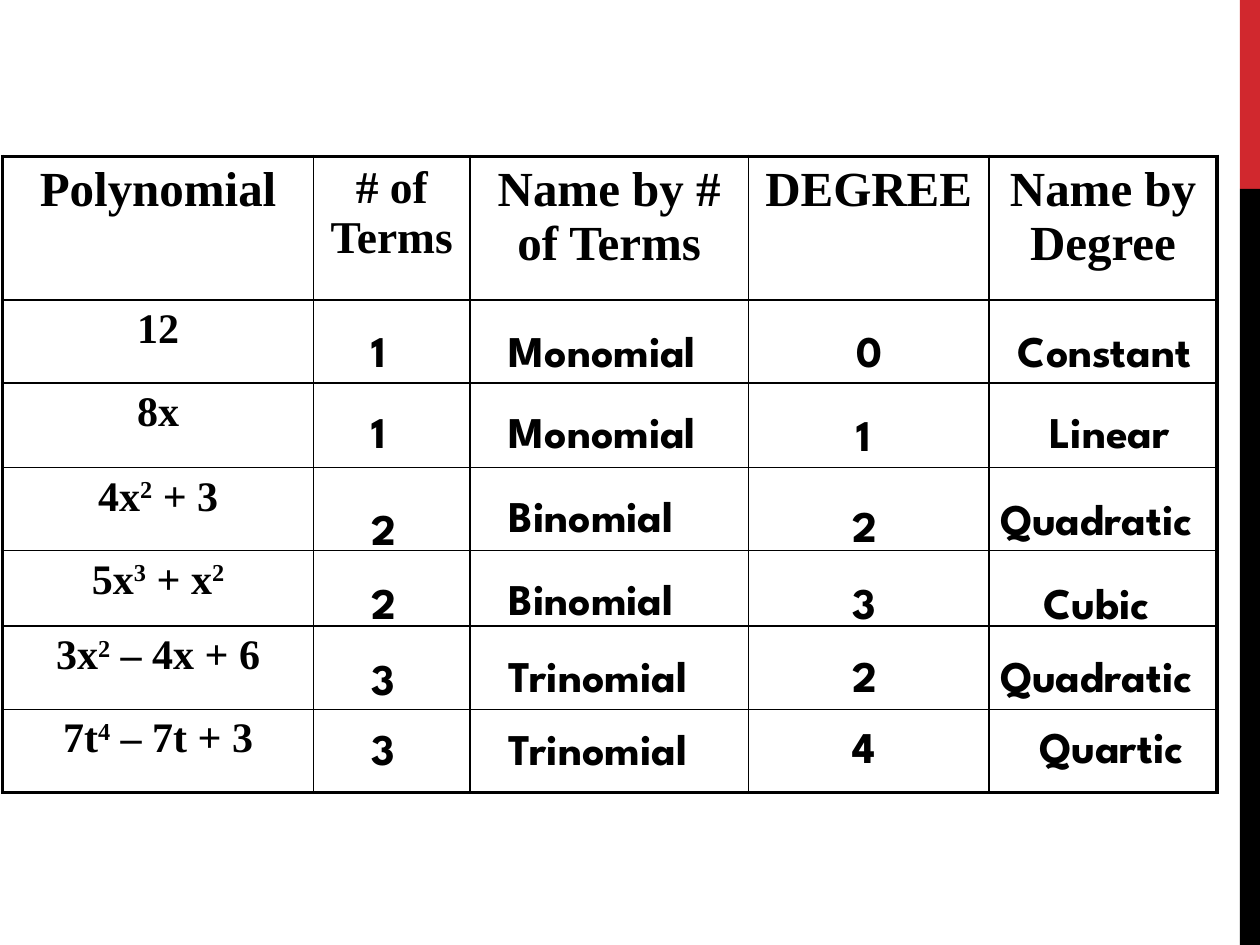
from lxml.etree import SubElement
from pptx import Presentation
from pptx.dml.color import RGBColor
from pptx.enum.shapes import MSO_SHAPE as Shape
from pptx.enum.text import MSO_AUTO_SIZE as AutoSize, PP_ALIGN as Align
from pptx.oxml import parse_xml
from pptx.oxml.ns import nsdecls, qn
from pptx.util import Pt

PX = 9144
BLACK = RGBColor(0x00, 0x00, 0x00)
RED = RGBColor(0xD1, 0x28, 0x2E)
TABLE_FONT = "Times New Roman"
ANSWER_FONT = "League Spartan"
THIN, THICK = 1, 2.25

COLUMN_WIDTHS = [247, 124, 221, 191, 181]
ROW_HEIGHTS = [114, 66, 67, 66, 60, 66, 66]
HEADERS = [
    ("Polynomial", 28),
    ("# of Terms", 26),
    ("Name by # of Terms", 28),
    ("DEGREE", 28),
    ("Name by Degree", 28),
]
POLYNOMIALS = ["12", "8x", "4x^2^ + 3", "5x^3^ + x^2^", "3x^2^ – 4x + 6", "7t^4^ – 7t + 3"]

TERM_COUNTS = [
    ("1", 285, 252), ("1", 285, 316), ("2", 285, 393),
    ("2", 285, 452), ("3", 285, 512), ("3", 285, 568),
]
TERM_NAMES = [
    ("Monomial", 394, 252), ("Monomial", 394, 316), ("Binomial", 394, 383),
    ("Binomial", 394, 449), ("Trinomial", 394, 510), ("Trinomial", 394, 568),
]
DEGREES = [
    ("0", 670, 252), ("1", 670, 319), ("2", 667, 391),
    ("3", 667, 452), ("2", 667, 510), ("4", 667, 566),
]
DEGREE_NAMES = [
    ("Constant", 798, 252), ("Linear", 823, 316), ("Quadratic", 784, 385),
    ("Cubic", 818, 452), ("Quadratic", 784, 510), ("Quartic", 815, 566),
]
ANSWER_COLUMNS = [(90, TERM_COUNTS), (208, TERM_NAMES), (104, DEGREES), (208, DEGREE_NAMES)]


class SlideBuilder:
    """Draws styled elements on the current slide, with lengths in px."""

    def __init__(self, slide):
        self.slide = slide

    def style(self, run, font_name, size):
        run.font.name = font_name
        run.font.size = Pt(size)
        run.font.bold = True
        run.font.color.rgb = BLACK

    def bar(self, left, top, width, height, color):
        bar = self.slide.shapes.add_shape(
            Shape.RECTANGLE, left * PX, top * PX, width * PX, height * PX)
        bar.shadow.inherit = False
        bar.fill.solid()
        bar.fill.fore_color.rgb = color
        bar.line.fill.background()

    def answer(self, text, left, top, width):
        box = self.slide.shapes.add_textbox(left * PX, top * PX, width * PX, 52 * PX)
        frame = box.text_frame
        frame.word_wrap = True
        frame.auto_size = AutoSize.SHAPE_TO_FIT_TEXT
        frame.text = text
        self.style(frame.paragraphs[0].runs[0], ANSWER_FONT, 25)

    def table(self, left, top, widths, heights):
        frame = self.slide.shapes.add_table(
            len(heights), len(widths), left * PX, top * PX, sum(widths) * PX, sum(heights) * PX)
        table = frame.table
        table.first_row = table.horz_banding = False
        for column, width in zip(table.columns, widths):
            column.width = width * PX
        for row, height in zip(table.rows, heights):
            row.height = height * PX
        last_row, last_column = len(heights) - 1, len(widths) - 1
        for r in range(len(heights)):
            for c in range(len(widths)):
                outer = {"L": c == 0, "R": c == last_column, "T": r == 0, "B": r == last_row}
                self.borders(table.cell(r, c), outer)
        return table

    def borders(self, cell, outer):
        cell.fill.background()
        properties = cell._tc.get_or_add_tcPr()
        for index, (side, is_outer) in enumerate(outer.items()):
            width = Pt(THICK if is_outer else THIN)
            properties.insert(index, parse_xml(
                f'<a:ln{side} {nsdecls("a")} w="{width}"><a:solidFill>'
                f'<a:srgbClr val="{BLACK}"/></a:solidFill></a:ln{side}>'))

    def cell_text(self, cell, text, size):
        paragraph = cell.text_frame.paragraphs[0]
        paragraph.alignment = Align.CENTER
        spacing = SubElement(paragraph._p.get_or_add_pPr(), qn("a:spcBef"))
        SubElement(spacing, qn("a:spcPct")).set("val", "20000")
        for index, part in enumerate(text.split("^")):
            if part:
                run = paragraph.add_run()
                run.text = part
                self.style(run, TABLE_FONT, size)
                if index % 2:
                    run._r.get_or_add_rPr().set("baseline", "30000")


def main():
    deck = Presentation()
    deck.slide_width, deck.slide_height = 1000 * PX, 750 * PX
    builder = SlideBuilder(deck.slides.add_slide(deck.slide_layouts[6]))

    builder.bar(984, 0, 16, 150, RED)
    builder.bar(984, 150, 16, 600, BLACK)

    classification = builder.table(2, 124, COLUMN_WIDTHS, ROW_HEIGHTS)
    for column, (header, size) in enumerate(HEADERS):
        builder.cell_text(classification.cell(0, column), header, size)
    for row, polynomial in enumerate(POLYNOMIALS, start=1):
        builder.cell_text(classification.cell(row, 0), polynomial, 24)

    for width, answers in ANSWER_COLUMNS:
        for text, left, top in answers:
            builder.answer(text, left, top, width)

    deck.save("out.pptx")


if __name__ == "__main__":
    main()
